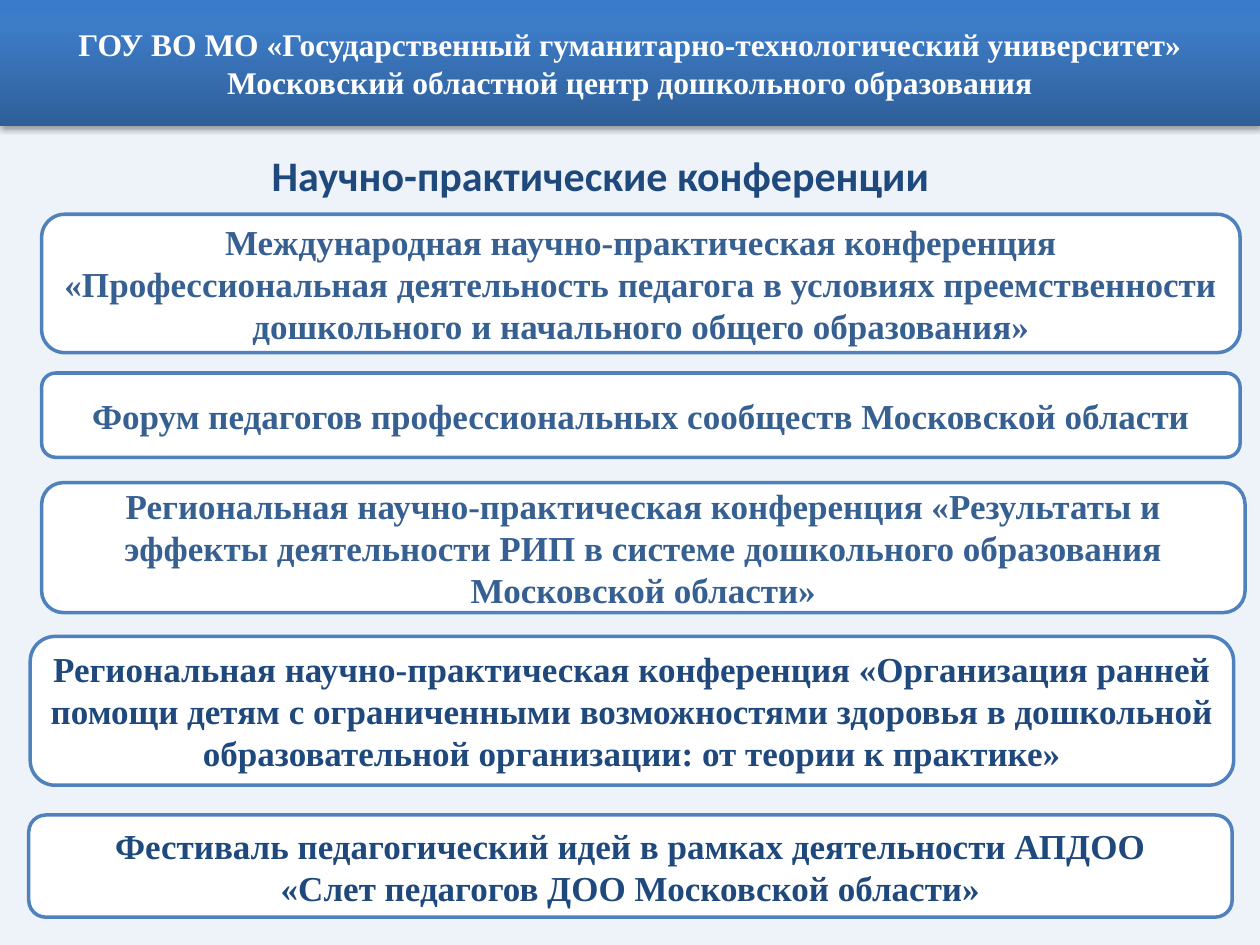
from copy import deepcopy

from pptx import Presentation
from pptx.dml.color import RGBColor
from pptx.enum.shapes import MSO_SHAPE
from pptx.enum.text import MSO_ANCHOR, MSO_AUTO_SIZE, PP_ALIGN
from pptx.oxml import parse_xml
from pptx.oxml.ns import nsdecls, qn
from pptx.util import Cm, Pt

PALE_BLUE = RGBColor(0xEE, 0xF3, 0xF9)
WHITE = RGBColor(0xFF, 0xFF, 0xFF)
BORDER_BLUE = RGBColor(0x4F, 0x81, 0xBD)
MID_BLUE = RGBColor(0x37, 0x60, 0x92)
NAVY = RGBColor(0x1F, 0x49, 0x7D)
HEADER_STOPS = [
    (0, RGBColor(0x2F, 0x5F, 0x99)),
    (0.8, RGBColor(0x3D, 0x7C, 0xC7)),
    (1, RGBColor(0x3A, 0x7C, 0xCB)),
]
SERIF = "Times New Roman"


def write_lines(shape, lines, size, color, font_name=SERIF):
    """Fill the shape with centred bold paragraphs, one per line."""
    frame = shape.text_frame
    frame.word_wrap = True
    frame.auto_size = MSO_AUTO_SIZE.NONE
    frame.vertical_anchor = MSO_ANCHOR.MIDDLE
    for index, line in enumerate(lines):
        paragraph = frame.add_paragraph() if index else frame.paragraphs[0]
        paragraph.alignment = PP_ALIGN.CENTER
        run = paragraph.add_run()
        run.text = line
        run.font.name = font_name
        run.font.size = Pt(size)
        run.font.bold = True
        run.font.color.rgb = color


prs = Presentation()
prs.slide_width = Cm(25.4)
prs.slide_height = Cm(19.05)
slide = prs.slides.add_slide(prs.slide_layouts[5])
slide.background.fill.solid()
slide.background.fill.fore_color.rgb = PALE_BLUE

# Title
title = slide.shapes.title
title.left, title.top, title.width, title.height = Cm(1.45), Cm(3.02), Cm(21.31), Cm(0.99)
write_lines(title, ["Научно-практические конференции"], 24, NAVY, "Calibri")

# Header band with a three-stop gradient and a soft shadow
header = slide.shapes.add_shape(MSO_SHAPE.RECTANGLE, 0, 0, prs.slide_width, Cm(2.54))
header.line.fill.background()
header.fill.gradient()
header.fill.gradient_angle = 90
header_properties = header._element.spPr
stop_list = header_properties.find(qn("a:gradFill")).find(qn("a:gsLst"))
stop_list.insert(1, deepcopy(stop_list[0]))
for stop, (position, color) in zip(header.fill.gradient_stops, HEADER_STOPS):
    stop.position = position
    stop.color.rgb = color
header.shadow.inherit = False
header_properties.find(qn("a:effectLst")).append(parse_xml(
    f'<a:outerShdw {nsdecls("a")} blurRad="40000" dist="23000" dir="5400000" rotWithShape="0">'
    '<a:srgbClr val="000000"><a:alpha val="35000"/></a:srgbClr></a:outerShdw>'
))
write_lines(header, [
    "ГОУ ВО МО «Государственный гуманитарно-технологический университет»",
    "Московский областной центр дошкольного образования",
], 18, WHITE)

# Events: left, top, width, height in cm, text colour, lines
events = [
    (0.84, 4.32, 24.16, 2.79, MID_BLUE, [
        "Международная научно-практическая конференция «Профессиональная деятельность "
        "педагога в условиях преемственности дошкольного и начального общего образования»"]),
    (0.84, 7.52, 24.16, 1.7, MID_BLUE, [
        "Форум педагогов профессиональных сообществ Московской области"]),
    (0.84, 9.73, 24.26, 2.62, MID_BLUE, [
        "Региональная научно-практическая конференция «Результаты и эффекты "
        "деятельности РИП в системе дошкольного образования Московской области»"]),
    (0.61, 12.83, 24.26, 3, NAVY, [
        "Региональная научно-практическая конференция «Организация ранней помощи детям "
        "с ограниченными возможностями здоровья в дошкольной образовательной "
        "организации: от теории к практике»"]),
    (0.58, 16.43, 24.26, 2.06, NAVY, [
        "Фестиваль педагогический идей в рамках деятельности АПДОО",
        "«Слет педагогов ДОО Московской области»"]),
]
for left, top, width, height, color, lines in events:
    event = slide.shapes.add_shape(
        MSO_SHAPE.ROUNDED_RECTANGLE, Cm(left), Cm(top), Cm(width), Cm(height))
    event.shadow.inherit = False
    event.fill.solid()
    event.fill.fore_color.rgb = WHITE
    event.line.color.rgb = BORDER_BLUE
    event.line.width = Pt(2)
    write_lines(event, lines, 20, color)

prs.save("out.pptx")
